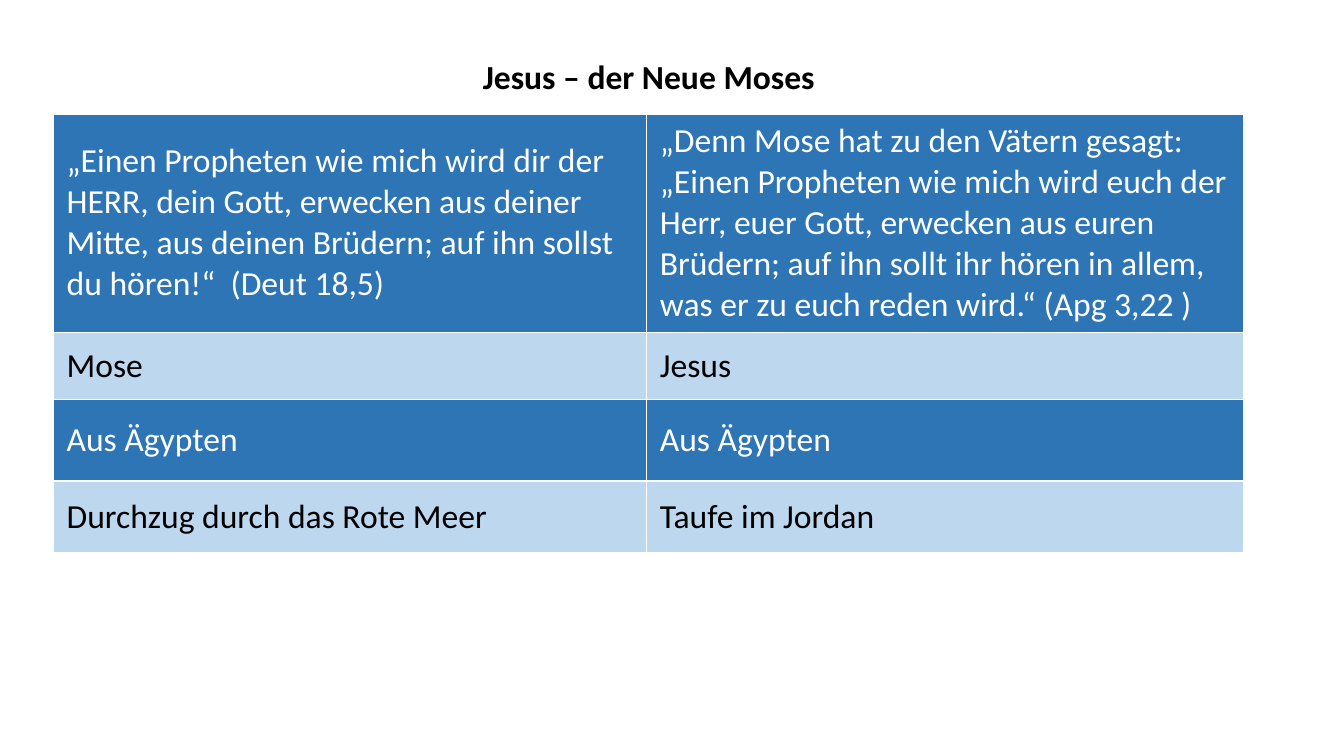
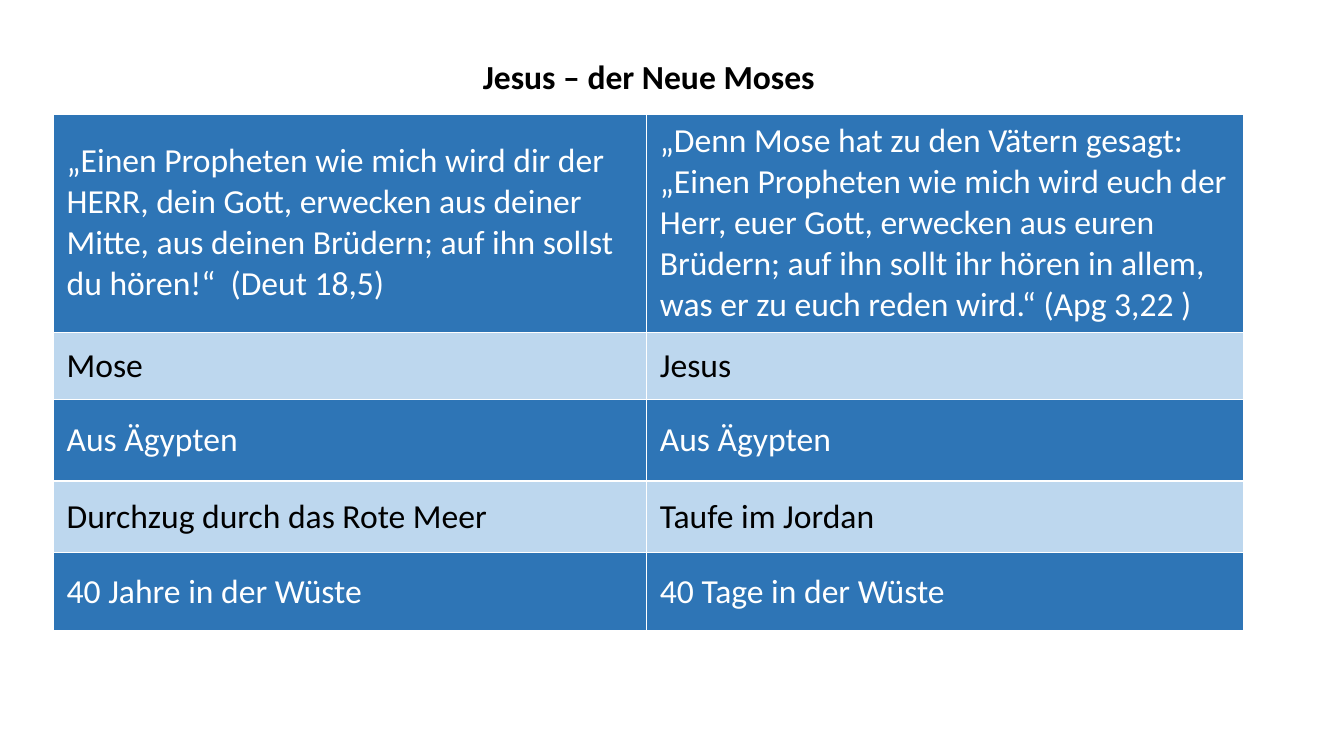
from dataclasses import dataclass

from lxml.etree import SubElement
from pptx import Presentation
from pptx.dml.color import RGBColor as Rgb
from pptx.enum.text import MSO_ANCHOR as Anchor, PP_ALIGN as Align
from pptx.oxml.ns import qn
from pptx.util import Cm, Pt


@dataclass(frozen=True)
class Theme:
    font: str = "Calibri"
    text_size: int = 24
    white: str = "FFFFFF"
    black: str = "000000"
    dark_blue: str = "2E75B6"
    light_blue: str = "BDD7EE"
    thin_rule: int = 1
    thick_rule: int = 3


TITLE = "Jesus – der Neue Moses"
COLUMN_WIDTHS = (14.95, 15.05)
TITLE_HEIGHT = 1.75
COMPARISONS = (
    (5.54,
     "„Einen Propheten wie mich wird dir der HERR, dein Gott, erwecken aus deiner "
     "Mitte, aus deinen Brüdern; auf ihn sollst du hören!“  (Deut 18,5)",
     "„Denn Mose hat zu den Vätern gesagt: „Einen Propheten wie mich wird euch der "
     "Herr, euer Gott, erwecken aus euren Brüdern; auf ihn sollt ihr hören in allem, "
     "was er zu euch reden wird.“ (Apg 3,22 )"),
    (1.68, "Mose", "Jesus"),
    (2.06, "Aus Ägypten", "Aus Ägypten"),
    (1.8, "Durchzug durch das Rote Meer", "Taufe im Jordan"),
    (1.98, "40 Jahre in der Wüste", "40 Tage in der Wüste"),
)


def apply_format(target, values):
    for name, value in values.items():
        setattr(target, name, value)


class SlideBuilder:
    def __init__(self, deck, theme):
        self.deck = deck
        self.theme = theme
        self.page = None

    def new_page(self):
        self.page = self.deck.slides.add_slide(self.deck.slide_layouts[6])

    def borders(self, cell, bottom):
        properties = cell._tc.get_or_add_tcPr()
        thin = self.theme.thin_rule
        for side, width in (("L", thin), ("R", thin), ("T", thin), ("B", bottom)):
            line = SubElement(properties, qn(f"a:ln{side}"), w=str(Pt(width)))
            fill = SubElement(line, qn("a:solidFill"))
            SubElement(fill, qn("a:srgbClr"), val=self.theme.white)

    def cell(self, cell, text, fill, color, bold=False, align=Align.LEFT, bottom=None):
        self.borders(cell, bottom or self.theme.thin_rule)
        cell.fill.solid()
        cell.fill.fore_color.rgb = Rgb.from_string(fill)
        apply_format(cell, {
            "vertical_anchor": Anchor.MIDDLE,
            "margin_left": Cm(0.33), "margin_right": Cm(0.33),
            "margin_top": 0, "margin_bottom": 0,
        })
        if not text:
            return
        para = cell.text_frame.paragraphs[0]
        para.alignment = align
        span = para.add_run()
        span.text = text
        apply_format(span.font, {
            "name": self.theme.font, "size": Pt(self.theme.text_size), "bold": bold,
        })
        span.font.color.rgb = Rgb.from_string(color)

    def comparison_table(self, title, comparisons):
        theme = self.theme
        heights = [TITLE_HEIGHT] + [height for height, *_ in comparisons]
        frame = self.page.shapes.add_table(
            len(heights), len(COLUMN_WIDTHS), Cm(1.35), Cm(1.09),
            Cm(sum(COLUMN_WIDTHS)), Cm(sum(heights)))
        table = frame.table
        apply_format(table, {"first_row": False, "horz_banding": False})
        for column, width in zip(table.columns, COLUMN_WIDTHS):
            column.width = Cm(width)
        for row, height in zip(table.rows, heights):
            row.height = Cm(height)

        table.cell(0, 0).merge(table.cell(0, 1))
        for column, text in enumerate((title, "")):
            self.cell(table.cell(0, column), text, theme.white, theme.black,
                      bold=True, align=Align.CENTER, bottom=theme.thick_rule)

        bands = ((theme.dark_blue, theme.white), (theme.light_blue, theme.black))
        for index, (_, *texts) in enumerate(comparisons):
            fill, color = bands[index % 2]
            for column, text in enumerate(texts):
                self.cell(table.cell(index + 1, column), text, fill, color)


def main():
    deck = Presentation()
    apply_format(deck, {"slide_width": Cm(33.87), "slide_height": Cm(19.05)})
    builder = SlideBuilder(deck, Theme())
    for shown in (4, 5):
        builder.new_page()
        builder.comparison_table(TITLE, COMPARISONS[:shown])
    deck.save("out.pptx")


if __name__ == "__main__":
    main()
